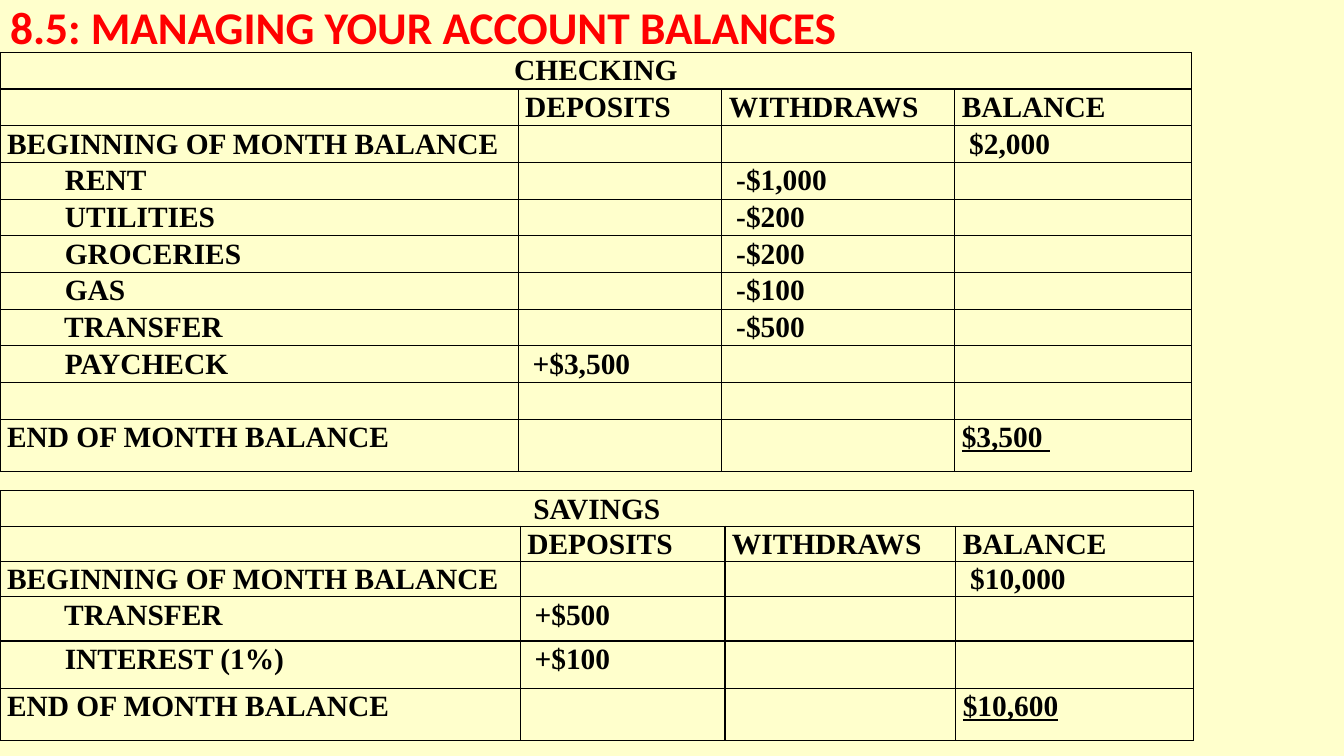
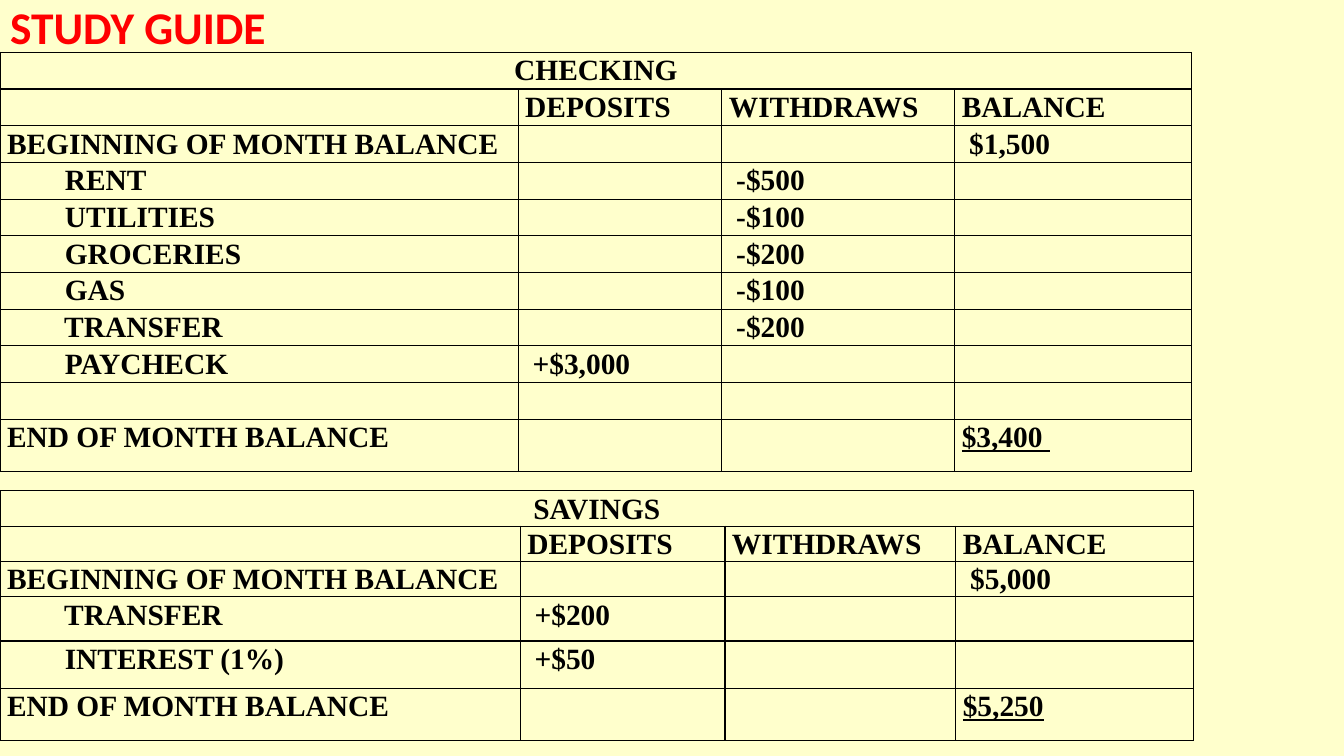
from dataclasses import dataclass

from lxml.etree import SubElement
from pptx import Presentation
from pptx.dml.color import RGBColor
from pptx.enum.text import MSO_ANCHOR as Anchor, MSO_AUTO_SIZE as AutoSize, PP_ALIGN as Align
from pptx.oxml.ns import qn
from pptx.util import Inches, Pt

CREAM, RED, BLACK = "FFFFCC", "FF0000", "000000"
HEADING_FONT, LEDGER_FONT = "Calibri", "Times New Roman"
HEADINGS = ("", "DEPOSITS", "WITHDRAWS", "BALANCE")
DEPOSIT, WITHDRAWAL, BALANCE = 1, 2, 3
NBSP = " "
TITLE_HEIGHT = 0.52
ENTRY_INDENT = 0.5


@dataclass(frozen=True)
class LedgerLayout:
    top: float
    columns: tuple[float, ...]
    rows: tuple[float, ...]


@dataclass(frozen=True)
class Ledger:
    name: str
    layout: LedgerLayout
    opening: str
    entries: tuple[tuple[str, str], ...]
    closing: str
    spare_rows: int = 0


CHECKING = LedgerLayout(0.52, (5.14, 2.02, 2.31, 2.35), (3.64 / 10,) * 10 + (0.52,))
SAVINGS = LedgerLayout(4.87, (5.16, 2.03, 2.29, 2.36), (0.35,) * 3 + (0.44, 0.47, 0.52))


def color(value: str) -> RGBColor:
    return RGBColor.from_string(value)


def write(frame, text: str, *, size: float = 21, font: str = LEDGER_FONT, ink: str = BLACK,
          align=Align.LEFT, spacing: float = 1.07, indent: float = 0,
          underline: bool = False) -> None:
    paragraph = frame.paragraphs[0]
    paragraph.alignment = align
    paragraph.line_spacing = spacing
    if indent:
        paragraph.level = 1
        properties = paragraph._p.get_or_add_pPr()
        properties.set("marL", str(Inches(indent)))
        properties.set("indent", "0")
    run = paragraph.add_run()
    run.text = text
    run.font.name = font
    run.font.size = Pt(size)
    run.font.bold = True
    run.font.underline = underline
    run.font.color.rgb = color(ink)


def format_cell(cell) -> None:
    """Give a cell its margins, black borders and a clear fill."""
    cell.margin_left = cell.margin_right = Inches(0.07)
    cell.margin_top = cell.margin_bottom = 0
    properties = cell._tc.get_or_add_tcPr()
    for side in ("a:lnL", "a:lnR", "a:lnT", "a:lnB"):
        border = SubElement(properties, qn(side), w=str(Pt(1)))
        SubElement(SubElement(border, qn("a:solidFill")), qn("a:srgbClr"), val=BLACK)
    cell.fill.background()
    cell.text_frame.paragraphs[0].font.size = Pt(18)


def add_ledger(slide, ledger: Ledger) -> None:
    layout = ledger.layout
    table = slide.shapes.add_table(
        len(layout.rows), len(layout.columns), 0, Inches(layout.top),
        Inches(sum(layout.columns)), Inches(sum(layout.rows))).table
    table.first_row = table.horz_banding = False
    for column, width in zip(table.columns, layout.columns):
        column.width = Inches(width)
    for row, height in zip(table.rows, layout.rows):
        row.height = Inches(height)
        for cell in row.cells:
            format_cell(cell)

    def fill(row: int, column: int, text: str, **style) -> None:
        write(table.cell(row, column).text_frame, text, **style)

    table.cell(0, 0).merge(table.cell(0, BALANCE))
    fill(0, 0, ledger.name, align=Align.CENTER)
    for column, heading in enumerate(HEADINGS):
        if heading:
            fill(1, column, heading)
    fill(2, 0, "BEGINNING OF MONTH BALANCE")
    fill(2, BALANCE, NBSP + ledger.opening, align=Align.JUSTIFY)
    for row, (entry, amount) in enumerate(ledger.entries, start=3):
        fill(row, 0, NBSP + entry, indent=ENTRY_INDENT)
        column = DEPOSIT if amount.startswith("+") else WITHDRAWAL
        fill(row, column, NBSP + amount, align=Align.JUSTIFY)
    last = 3 + len(ledger.entries) + ledger.spare_rows
    fill(last, 0, "END OF MONTH BALANCE")
    fill(last, BALANCE, ledger.closing, align=Align.JUSTIFY, underline=True)


def checking(opening: str, amounts: tuple[str, ...], closing: str) -> Ledger:
    names = ("RENT", "UTILITIES", "GROCERIES", "GAS", "TRANSFER", "PAYCHECK")
    return Ledger("CHECKING", CHECKING, opening, tuple(zip(names, amounts)),
                  closing + NBSP, spare_rows=1)


def savings(opening: str, amounts: tuple[str, ...], closing: str) -> Ledger:
    names = ("TRANSFER", "INTEREST (1%)")
    return Ledger("SAVINGS", SAVINGS, opening, tuple(zip(names, amounts)), closing)


def add_account_slide(deck, heading: str, *ledgers: Ledger) -> None:
    slide = deck.slides.add_slide(deck.slide_layouts[5])
    title = slide.shapes.title
    title.left = title.top = 0
    title.width, title.height = deck.slide_width, Inches(TITLE_HEIGHT)
    title.text_frame.auto_size = AutoSize.NONE
    title.text_frame.vertical_anchor = Anchor.MIDDLE
    write(title.text_frame, heading, size=32.4, font=HEADING_FONT, ink=RED, spacing=1.0)
    for ledger in ledgers:
        add_ledger(slide, ledger)


def main() -> None:
    deck = Presentation()
    deck.slide_width, deck.slide_height = Inches(13.33), Inches(7.5)
    backdrop = deck.slide_master.background.fill
    backdrop.solid()
    backdrop.fore_color.rgb = color(CREAM)

    add_account_slide(
        deck, "8.5: MANAGING YOUR ACCOUNT BALANCES",
        checking("$2,000", ("-$1,000", "-$200", "-$200", "-$100", "-$500", "+$3,500"), "$3,500"),
        savings("$10,000", ("+$500", "+$100"), "$10,600"))
    add_account_slide(
        deck, "STUDY GUIDE",
        checking("$1,500", ("-$500", "-$100", "-$200", "-$100", "-$200", "+$3,000"), "$3,400"),
        savings("$5,000", ("+$200", "+$50"), "$5,250"))
    deck.save("out.pptx")


if __name__ == "__main__":
    main()
